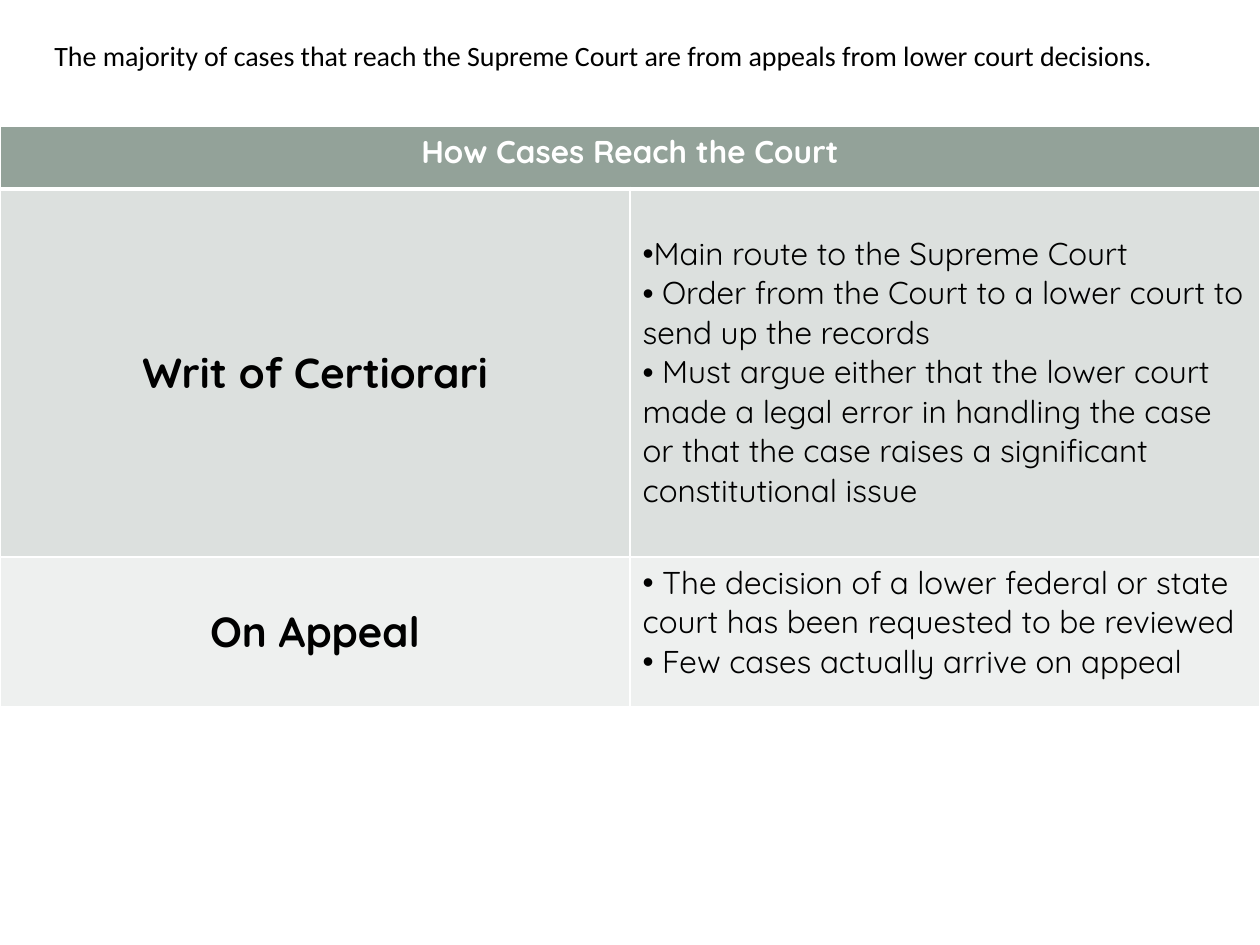
from dataclasses import dataclass

from lxml.etree import SubElement as Sub
from pptx import Presentation
from pptx.dml.color import RGBColor as Rgb
from pptx.enum.text import MSO_ANCHOR as Anchor, PP_ALIGN as Align
from pptx.oxml.ns import qn
from pptx.util import Emu, Pt


@dataclass(frozen=True)
class Theme:
    white: str = "FFFFFF"
    black: str = "000000"
    head: str = "93A299"
    dark: str = "DCE0DE"
    light: str = "EEF0EF"
    font: str = "Quicksand"
    plain: str = "Calibri"
    note: int = 16
    body: int = 18
    big: int = 24


@dataclass(frozen=True)
class Route:
    name: str
    points: tuple[str, ...]
    fill: str
    top: int


T = Theme()
ROUTES = (
    Route(
        "Writ of Certiorari",
        (
            "Main route to the Supreme Court",
            " Order from the Court to a lower court to send up the records",
            " Must argue either that the lower court made a legal error in handling "
            "the case or that the case raises a significant constitutional issue",
        ),
        T.dark,
        45,
    ),
    Route(
        "On Appeal",
        (
            " The decision of a lower federal or state court has been requested to be reviewed",
            " Few cases actually arrive on appeal",
        ),
        T.light,
        6,
    ),
)
COLS = (630, 630)
ROWS = (63, 368, 150)


def px(n: int) -> Emu:
    return Emu(round(n * 914400 / 126))


def style(frame, size: int, font: str = T.font, color: str = T.black,
          bold: bool = False, align=Align.LEFT) -> None:
    for para in frame.paragraphs:
        para.alignment = align
        for run in para.runs:
            run.font.size = Pt(size)
            run.font.name = font
            run.font.bold = bold
            run.font.color.rgb = Rgb.from_string(color)


def paint(cell, fill: str, base: int = 1) -> None:
    props = cell._tc.get_or_add_tcPr()
    for side, wide in (("L", 1), ("R", 1), ("T", 1), ("B", base)):
        line = Sub(props, qn(f"a:ln{side}"), w=str(Pt(wide)))
        solid = Sub(line, qn("a:solidFill"))
        Sub(solid, qn("a:srgbClr"), val=T.white)
    cell.fill.solid()
    cell.fill.fore_color.rgb = Rgb.from_string(fill)


def bullet(para) -> None:
    props = para._p.get_or_add_pPr()
    props.set("marL", "0")
    props.set("indent", "0")
    Sub(props, qn("a:buFont"), typeface="Arial")
    Sub(props, qn("a:buChar"), char="•")


def fill_row(table, row: int, route: Route) -> None:
    name, text = table.cell(row, 0), table.cell(row, 1)
    name.text_frame.text = route.name
    name.vertical_anchor = Anchor.MIDDLE
    style(name.text_frame, T.big, bold=True, align=Align.CENTER)
    text.text_frame.text = "\n".join(route.points)
    text.margin_top = px(route.top)
    style(text.text_frame, T.body)
    for para in text.text_frame.paragraphs:
        bullet(para)
    for cell in (name, text):
        paint(cell, route.fill)


def add_routes(slide) -> None:
    frame = slide.shapes.add_table(
        len(ROWS), len(COLS), px(0), px(126), px(sum(COLS)), px(sum(ROWS)))
    table = frame.table
    table.horz_banding = False
    for col, wide in zip(table.columns, COLS):
        col.width = px(wide)
    for row, high in zip(table.rows, ROWS):
        row.height = px(high)
    head = table.cell(0, 0)
    head.merge(table.cell(0, 1))
    head.text_frame.text = "How Cases Reach the Court"
    style(head.text_frame, T.body, color=T.white, bold=True, align=Align.CENTER)
    for col in range(len(COLS)):
        paint(table.cell(0, col), T.head, 3)
    for row, route in enumerate(ROUTES, 1):
        fill_row(table, row, route)


def add_note(slide) -> None:
    frame = slide.shapes.add_textbox(px(42), px(32), px(1155), px(46)).text_frame
    frame.word_wrap = True
    frame.text = ("The majority of cases that reach the Supreme Court "
                  "are from appeals from lower court decisions.")
    style(frame, T.note, T.plain)


def main() -> None:
    deck = Presentation()
    deck.slide_width, deck.slide_height = px(1260), px(945)
    slide = deck.slides.add_slide(deck.slide_layouts[6])
    add_routes(slide)
    add_note(slide)
    deck.save("out.pptx")


if __name__ == "__main__":
    main()
